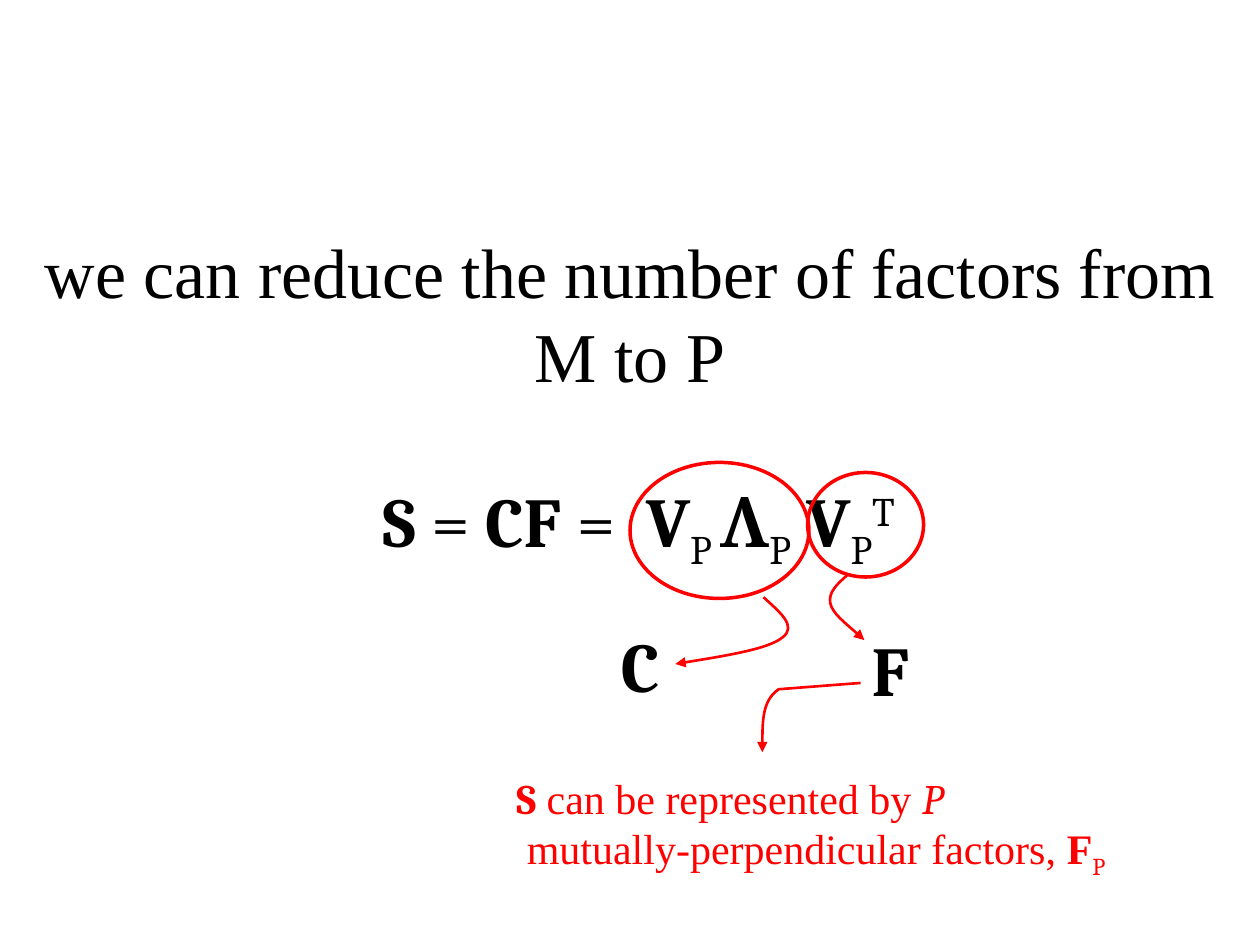
from lxml import etree
from pptx import Presentation
from pptx.dml.color import RGBColor
from pptx.enum.shapes import MSO_SHAPE
from pptx.enum.text import MSO_ANCHOR, MSO_AUTO_SIZE, PP_ALIGN
from pptx.oxml.ns import qn
from pptx.util import Inches, Pt

ELLIPSE = MSO_SHAPE.OVAL
MIDDLE = MSO_ANCHOR.MIDDLE
GROW = MSO_AUTO_SIZE.SHAPE_TO_FIT_TEXT
CENTER, LEFT = PP_ALIGN.CENTER, PP_ALIGN.LEFT
SERIF, MATH = "Times New Roman", "Cambria"
BLACK, RED = "000000", "FF0000"
SUB, SUPER = -25, 30


def color(value):
    return RGBColor.from_string(value)


def plain(text, font=MATH):
    return text, font, False, False, 0


def bold(text, font=MATH):
    return text, font, True, False, 0


def italic(text):
    return text, MATH, False, True, 0


def shifted(text, baseline):
    """Describe a subscript or superscript span; baseline is in percent."""
    return text, MATH, False, False, baseline


class SlideWriter:
    def __init__(self, page):
        self.page = page

    def text(self, left, top, width, height, paragraphs, size, ink=BLACK,
             align=LEFT, wrap=True):
        box = self.page.shapes.add_textbox(
            Inches(left), Inches(top), Inches(width), Inches(height))
        frame = box.text_frame
        frame.word_wrap = wrap
        frame.auto_size = GROW
        for index, spans in enumerate(paragraphs):
            para = frame.add_paragraph() if index else frame.paragraphs[0]
            para.alignment = align
            for text, font, is_bold, is_italic, baseline in spans:
                span = para.add_run()
                span.text = text
                span.font.name = font
                span.font.size = Pt(size)
                span.font.bold = is_bold
                span.font.italic = is_italic
                span.font.color.rgb = color(ink)
                if baseline:
                    properties = span._r.get_or_add_rPr()
                    properties.set("baseline", str(baseline * 1000))
        return box

    def outline(self, shape, weight):
        shape.shadow.inherit = False
        shape.fill.background()
        shape.line.color.rgb = color(RED)
        shape.line.width = Pt(weight)

    def ellipse(self, left, top, width, height):
        shape = self.page.shapes.add_shape(
            ELLIPSE, Inches(left), Inches(top), Inches(width), Inches(height))
        self.outline(shape, 2)

    def curved_arrow(self, points, straight=0):
        """Draw straight segments first, then one Bezier per three points."""
        start, *rest = [(Inches(x), Inches(y)) for x, y in points]
        builder = self.page.shapes.build_freeform(*start)
        builder.add_line_segments(rest, close=False)
        shape = builder.convert_to_shape()
        self.outline(shape, 1.5)
        outline_path = next(shape._element.iter(qn("a:path")))
        segments = outline_path.findall(qn("a:lnTo"))[straight:]
        for first in range(0, len(segments), 3):
            curve = etree.SubElement(outline_path, qn("a:cubicBezTo"))
            for segment in segments[first:first + 3]:
                curve.append(segment[0])
                outline_path.remove(segment)
        line = shape.line._get_or_add_ln()
        etree.SubElement(line, qn("a:tailEnd"), type="triangle")


def main():
    deck = Presentation()
    deck.slide_width, deck.slide_height = Inches(10), Inches(7.5)
    writer = SlideWriter(deck.slides.add_slide(deck.slide_layouts[6]))

    heading = [plain("we can reduce the number of factors from M to P", SERIF)]
    equation = [
        plain(" ", SERIF), bold("S "), plain("= "), bold("CF"), plain(" =  "),
        bold("V"), shifted("P ", SUB), bold("Λ"), shifted("P", SUB),
        bold(" V"), shifted("P", SUB), shifted("T", SUPER),
    ]
    title = writer.text(0, 1.33, 10, 3.7, [heading, equation], 40, align=CENTER)
    title.text_frame.auto_size = MSO_AUTO_SIZE.NONE
    title.text_frame.vertical_anchor = MIDDLE
    title.text_frame.paragraphs[1].space_before = Pt(46)

    writer.ellipse(5, 3.67, 1.42, 1.08)
    writer.ellipse(6.41, 3.75, 0.92, 0.83)
    for letter, left, top in (("C", 4.83, 4.89), ("F", 6.82, 4.92)):
        writer.text(left, top, 0.51, 0.77, [[bold(letter)]], 40, wrap=False)

    writer.curved_arrow([(6.06, 4.74), (6.19, 4.86), (6.33, 4.97), (6.21, 5.06),
                         (6.1, 5.15), (5.73, 5.21), (5.36, 5.27)])
    writer.curved_arrow([(6.73, 4.56), (6.65, 4.63), (6.57, 4.7), (6.59, 4.79),
                         (6.61, 4.87), (6.74, 4.97), (6.86, 5.08)])
    writer.curved_arrow([(6.83, 5.42), (6.18, 5.47), (6.05, 5.56), (6.05, 5.77),
                         (6.05, 5.97)], straight=1)

    writer.text(4, 6.08, 5, 0.91, [
        [bold("S"), plain(" can be represented by ", SERIF), italic("P")],
        [plain(" mutually-perpendicular factors, ", SERIF), bold("F", SERIF),
         shifted("P", SUB)],
    ], 24, RED)
    deck.save("out.pptx")


if __name__ == "__main__":
    main()
